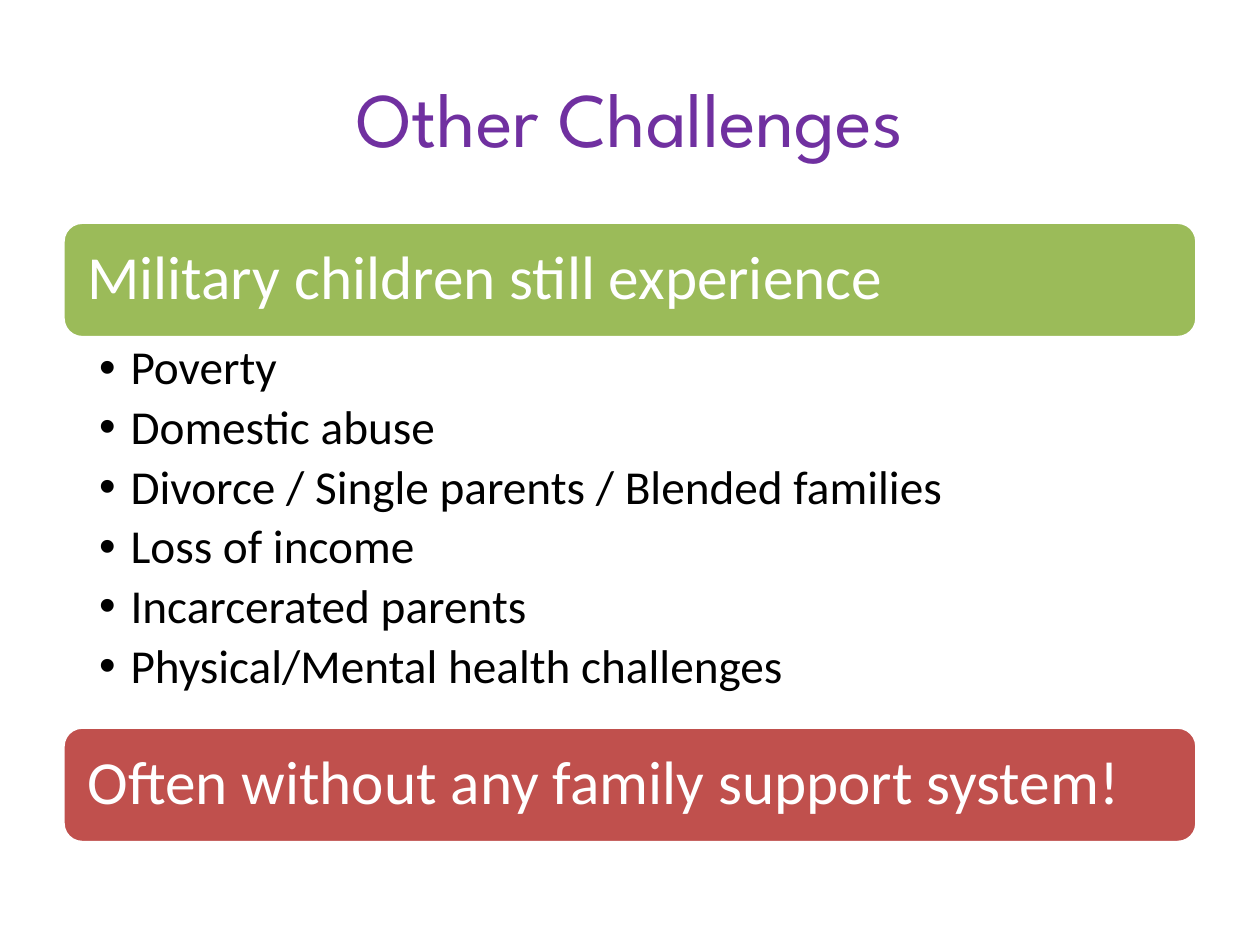
from dataclasses import dataclass

from lxml import etree
from pptx import Presentation
from pptx.dml.color import RGBColor
from pptx.enum.shapes import MSO_SHAPE
from pptx.enum.text import MSO_ANCHOR, PP_ALIGN
from pptx.oxml.ns import qn
from pptx.slide import Slide
from pptx.util import Pt

ROUNDED = MSO_SHAPE.ROUNDED_RECTANGLE
TOP, MIDDLE = MSO_ANCHOR.TOP, MSO_ANCHOR.MIDDLE
LEFT, CENTER = PP_ALIGN.LEFT, PP_ALIGN.CENTER

COLORS = {
    "title": "7030A0",
    "green": "9BBB59",
    "red": "C0504D",
    "white": "FFFFFF",
    "black": "000000",
}
MARGIN, CONTENT_WIDTH = 36, 648
BANNER_TOP, BANNER_HEIGHT, LIST_HEIGHT = 127, 66, 222.5

CHALLENGES = [
    "Poverty",
    "Domestic abuse",
    "Divorce / Single parents / Blended families",
    "Loss of income",
    "Incarcerated parents",
    "Physical/Mental health challenges",
]


def color(name):
    return RGBColor.from_string(COLORS[name])


@dataclass
class SlideBuilder:
    """Draws styled elements on the current slide, with lengths in points."""

    slide: Slide
    title_font: str = "League Spartan"
    body_font: str = "Calibri"

    def place(self, shape, top, height):
        shape.left, shape.top = Pt(MARGIN), Pt(top)
        shape.width, shape.height = Pt(CONTENT_WIDTH), Pt(height)

    def format_frame(self, text_frame, anchor, left, top, right, bottom):
        text_frame.word_wrap = True
        text_frame.vertical_anchor = anchor
        text_frame.margin_left, text_frame.margin_top = Pt(left), Pt(top)
        text_frame.margin_right, text_frame.margin_bottom = Pt(right), Pt(bottom)

    def format_paragraph(self, paragraph, font, size, color_name, alignment=LEFT):
        paragraph.alignment = alignment
        for run in paragraph.runs:
            run.font.name, run.font.size = font, Pt(size)
            run.font.color.rgb = color(color_name)

    def title(self, text, top, height):
        shape = self.slide.shapes.title
        self.place(shape, top, height)
        shape.text_frame.text = text
        self.format_frame(shape.text_frame, MIDDLE, 7.2, 3.6, 7.2, 3.6)
        self.format_paragraph(
            shape.text_frame.paragraphs[0], self.title_font, 44, "title", CENTER
        )

    def banner(self, text, top, fill):
        shape = self.slide.shapes.add_shape(ROUNDED, 0, 0, 0, 0)
        self.place(shape, top, BANNER_HEIGHT)
        shape.shadow.inherit = False
        shape.fill.solid()
        shape.fill.fore_color.rgb = color(fill)
        shape.line.color.rgb = color("white")
        shape.line.width = Pt(2)
        shape.text_frame.text = text
        self.format_frame(shape.text_frame, MIDDLE, 10.8, 10.8, 10.8, 10.8)
        paragraph = shape.text_frame.paragraphs[0]
        paragraph.line_spacing = 0.9
        self.format_paragraph(paragraph, self.body_font, 35, "white")

    def bullet_list(self, items, top, height):
        shape = self.slide.shapes.add_textbox(0, 0, 0, 0)
        self.place(shape, top, height)
        shape.text_frame.text = "\n".join(items)
        self.format_frame(shape.text_frame, TOP, 20.6, 3.6, 19.2, 3.6)
        for paragraph in shape.text_frame.paragraphs:
            paragraph.level = 1
            paragraph.line_spacing = 0.9
            paragraph.space_after = Pt(4.9)
            self.format_paragraph(paragraph, self.body_font, 27, "black")
            properties = paragraph._p.get_or_add_pPr()
            properties.set("marL", str(Pt(18)))
            properties.set("indent", str(Pt(-18)))
            etree.SubElement(properties, qn("a:buFont")).set("typeface", "Arial")
            etree.SubElement(properties, qn("a:buChar")).set("char", "•")


def main():
    presentation = Presentation()
    presentation.slide_width, presentation.slide_height = Pt(720), Pt(540)
    title_only = presentation.slide_layouts.get_by_name("Title Only")
    builder = SlideBuilder(presentation.slides.add_slide(title_only))

    list_top = BANNER_TOP + BANNER_HEIGHT
    builder.title("Other Challenges", 21.6, 90)
    builder.banner("Military children still experience", BANNER_TOP, "green")
    builder.bullet_list(CHALLENGES, list_top, LIST_HEIGHT)
    builder.banner(
        "Often without any family support system!", list_top + LIST_HEIGHT, "red"
    )
    presentation.save("out.pptx")


if __name__ == "__main__":
    main()
